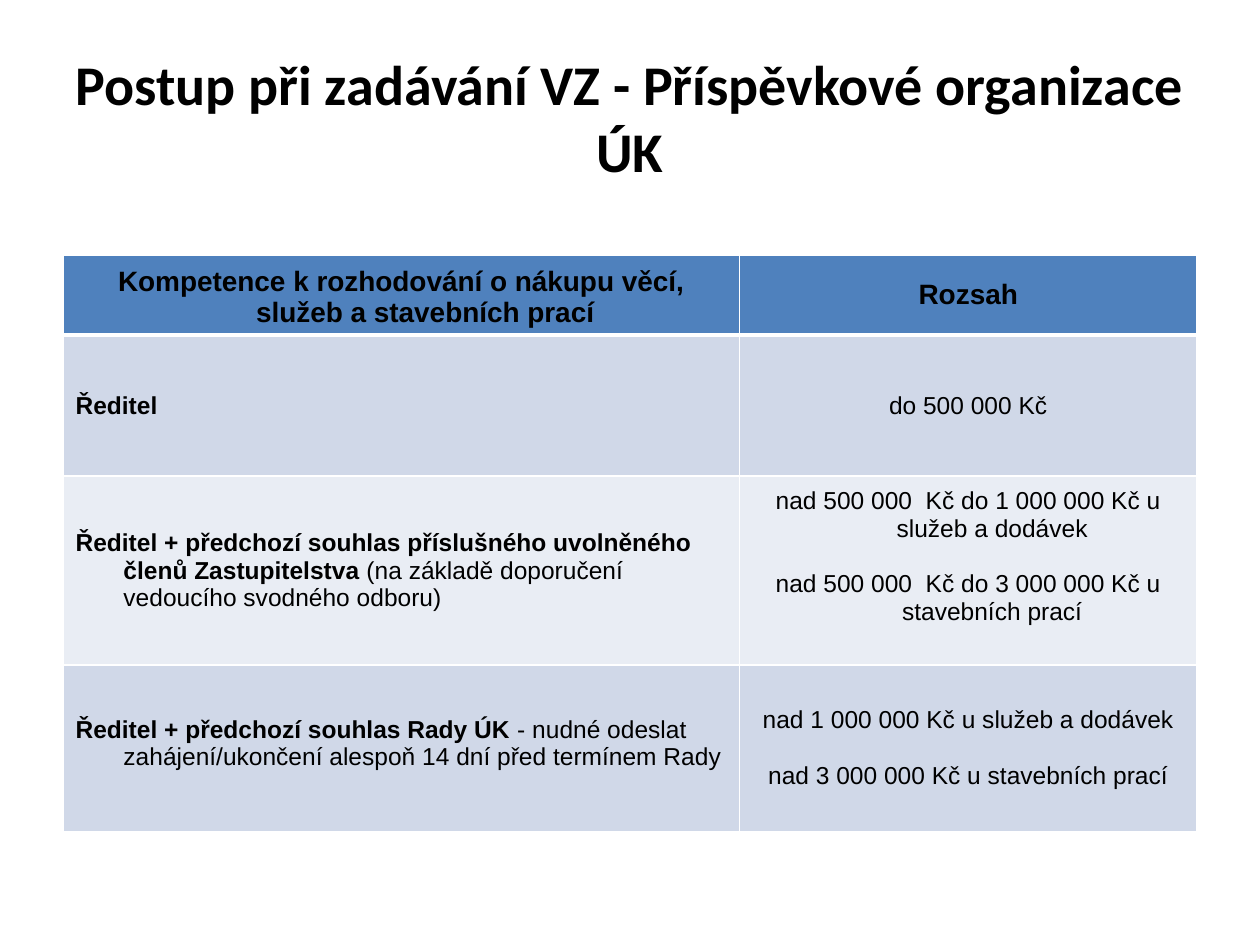
from lxml import etree
from pptx import Presentation, util as u
from pptx.dml.color import RGBColor
from pptx.enum import text
from pptx.oxml import ns


def paint(color_format, value):
    color_format.rgb = RGBColor.from_string(value)


def add_runs(paragraph, runs, size, font):
    for content, bold in runs:
        run = paragraph.add_run()
        run.text = content
        run.font.size = u.Pt(size)
        run.font.name = font
        run.font.bold = bold
        paint(run.font.color, "000000")


deck = Presentation()
deck.slide_width, deck.slide_height = u.Inches(10), u.Inches(7.5)
W, H = deck.slide_width, deck.slide_height
slide = deck.slides.add_slide(deck.slide_layouts[6])
left, content_width = int(W * 0.05), int(W * 0.9)
center, start = text.PP_ALIGN.CENTER, text.PP_ALIGN.LEFT
middle, bottom = text.MSO_ANCHOR.MIDDLE, text.MSO_ANCHOR.BOTTOM

heading = slide.shapes.add_textbox(left, int(H * 0.04), content_width, int(H / 6)).text_frame
heading.word_wrap = True
heading.vertical_anchor = middle
heading.paragraphs[0].alignment = center
add_runs(heading.paragraphs[0],
         [("Postup při zadávání VZ - Příspěvkové organizace ÚK", True)], 32, "Calibri")

competences = [
    ([("Kompetence k rozhodování o nákupu věcí, služeb a stavebních prací", True)], ["Rozsah"]),
    ([("Ředitel", True)], ["do 500 000 Kč"]),
    ([("Ředitel + předchozí souhlas příslušného uvolněného členů Zastupitelstva", True),
      (" (na základě doporučení vedoucího svodného odboru)", False)],
     ["nad 500 000  Kč do 1 000 000 Kč u služeb a dodávek",
      "nad 500 000  Kč do 3 000 000 Kč u stavebních prací"]),
    ([("Ředitel + předchozí souhlas Rady ÚK", True),
      (" - nudné odeslat zahájení/ukončení alespoň 14 dní před termínem Rady", False)],
     ["nad 1 000 000 Kč u služeb a dodávek", "nad 3 000 000 Kč u stavebních prací"]),
]
row_heights = [0.58, 1.12, 1.5, 1.32]
row_fills = ["4F81BD", "D0D8E8", "E9EDF4", "D0D8E8"]
anchors = {(0, 0): bottom, (3, 0): bottom}
bottom_margins = {(2, 1): 0.27, (3, 0): 0.48}

grid = slide.shapes.add_table(4, 2, left, int(H * 0.27), content_width,
                              u.Inches(sum(row_heights))).table
for column, width in zip(grid.columns, [5.37, 3.63]):
    column.width = u.Inches(width)

for r, (competence, limits) in enumerate(competences):
    grid.rows[r].height = u.Inches(row_heights[r])
    for c, lines in enumerate([[competence], [[(limit, r == 0)] for limit in limits]]):
        cell = grid.cell(r, c)
        cell.vertical_anchor = anchors.get((r, c), middle)
        cell.margin_bottom = u.Inches(bottom_margins.get((r, c), 0.05))
        for i, runs in enumerate(lines):
            paragraph = cell.text_frame.add_paragraph() if i else cell.text_frame.paragraphs[0]
            paragraph.alignment = center if c or r == 0 else start
            if i:
                paragraph.space_before = u.Pt(16)
            properties = paragraph._p.get_or_add_pPr()
            properties.set("marL", str(u.Inches(0.38)))
            properties.set("indent", str(-u.Inches(0.38)))
            add_runs(paragraph, runs, 14 if r else 16, "Arial")
        borders = cell._tc.get_or_add_tcPr()
        for side in ["lnL", "lnR", "lnT", "lnB"]:
            thick = (r, side) in [(0, "lnB"), (1, "lnT")]
            border = etree.SubElement(borders, ns.qn(f"a:{side}"), w=str(u.Pt(3 if thick else 1)))
            border_fill = etree.SubElement(border, ns.qn("a:solidFill"))
            etree.SubElement(border_fill, ns.qn("a:srgbClr"), val="FFFFFF")
        cell.fill.solid()
        paint(cell.fill.fore_color, row_fills[r])

deck.save("out.pptx")
